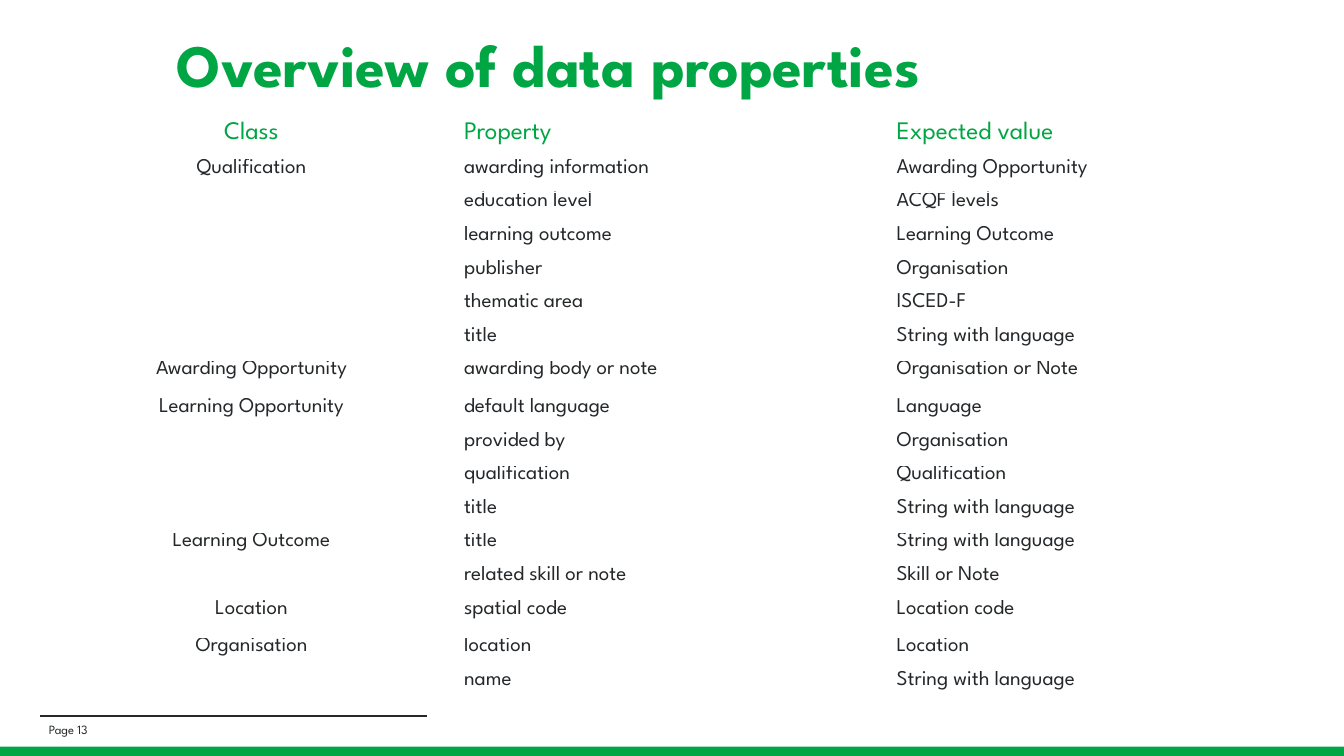
from dataclasses import dataclass

from lxml.etree import SubElement
from pptx import Presentation
from pptx.dml.color import RGBColor
from pptx.enum.shapes import MSO_CONNECTOR, MSO_SHAPE
from pptx.enum.text import MSO_ANCHOR, PP_ALIGN
from pptx.oxml.ns import qn
from pptx.slide import Slide
from pptx.table import Table
from pptx.text.text import TextFrame
from pptx.util import Emu, Pt

EMU_PER_PX = 9525
FONT = "League Spartan"
GREEN = "00A643"
DARK = "24282A"


@dataclass(frozen=True)
class ClassGroup:
    name: str
    properties: tuple[tuple[str, str], ...]
    last_row_height: int = 32


@dataclass(frozen=True)
class Label:
    text: str
    box: tuple[int, int, int, int]
    size: float
    color: str
    bold: bool = False
    line_spacing: float = 1.0


HEADERS = ("Class", "Property", "Expected value")
HEADER_HEIGHT = 38
ROW_HEIGHT = 32
COLUMN_WIDTHS = (384, 412, 415)
COLUMN_ALIGNMENTS = (PP_ALIGN.CENTER, PP_ALIGN.JUSTIFY, PP_ALIGN.JUSTIFY)

GROUPS = (
    ClassGroup("Qualification", (
        ("awarding information", "Awarding Opportunity"),
        ("education level", "ACQF levels"),
        ("learning outcome", "Learning Outcome"),
        ("publisher", "Organisation"),
        ("thematic area", "ISCED-F"),
        ("title", "String with language"),
    )),
    ClassGroup("Awarding Opportunity", (
        ("awarding body or note", "Organisation or Note"),
    ), last_row_height=36),
    ClassGroup("Learning Opportunity", (
        ("default language", "Language"),
        ("provided by", "Organisation"),
        ("qualification", "Qualification"),
        ("title", "String with language"),
    )),
    ClassGroup("Learning Outcome", (
        ("title", "String with language"),
        ("related skill or note", "Skill or Note"),
    )),
    ClassGroup("Location", (
        ("spatial code", "Location code"),
    ), last_row_height=36),
    ClassGroup("Organisation", (
        ("location", "Location"),
        ("name", "String with language"),
    )),
)

LABELS = (
    Label("Page 13", (37, 686, 390, 18), 9, DARK),
    Label("Overview of data properties", (159, 16, 1080, 97), 42.9, GREEN,
          bold=True, line_spacing=0.9),
)


def px(length: int) -> Emu:
    return Emu(length * EMU_PER_PX)


def rgb(color: str) -> RGBColor:
    return RGBColor.from_string(color)


def write_text(frame: TextFrame, text: str, *, size: float, color: str,
               bold: bool = False, alignment: PP_ALIGN = PP_ALIGN.LEFT,
               line_spacing: float = 1.0) -> None:
    paragraph = frame.paragraphs[0]
    paragraph.alignment = alignment
    paragraph.line_spacing = line_spacing
    run = paragraph.add_run()
    run.text = text
    run.font.name = FONT
    run.font.size = Pt(size)
    run.font.bold = bold
    run.font.color.rgb = rgb(color)


def add_label(slide: Slide, label: Label) -> None:
    frame = slide.shapes.add_textbox(*map(px, label.box)).text_frame
    frame.word_wrap = True
    frame.vertical_anchor = MSO_ANCHOR.MIDDLE
    write_text(frame, label.text, size=label.size, color=label.color,
               bold=label.bold, line_spacing=label.line_spacing)


def add_footer(slide: Slide) -> None:
    bar = slide.shapes.add_shape(MSO_SHAPE.RECTANGLE, px(-3), px(711), px(1286), px(13))
    bar.shadow.inherit = False
    bar.fill.solid()
    bar.fill.fore_color.rgb = rgb(GREEN)
    bar.line.fill.background()
    rule = slide.shapes.add_connector(MSO_CONNECTOR.STRAIGHT, px(38), px(682), px(407), px(682))
    rule.line.color.rgb = rgb(DARK)
    rule.line.width = Pt(1.5)
    SubElement(rule._element.spPr, qn("a:effectLst"))


def fill_row(table: Table, row: int, height: int, texts: tuple[str, ...], *,
             size: float, color: str, line_spacing: float = 1.0) -> None:
    table.rows[row].height = px(height)
    for column, text in enumerate(texts):
        cell = table.cell(row, column)
        cell.fill.background()
        cell.margin_left, cell.margin_right = px(11), px(10)
        cell.margin_top = cell.margin_bottom = 0
        write_text(cell.text_frame, text, size=size, color=color,
                   alignment=COLUMN_ALIGNMENTS[column], line_spacing=line_spacing)


def add_property_table(slide: Slide) -> None:
    row_count = 1 + sum(len(group.properties) for group in GROUPS)
    table = slide.shapes.add_table(
        row_count, len(HEADERS), px(47), px(113),
        px(sum(COLUMN_WIDTHS)), px(HEADER_HEIGHT + ROW_HEIGHT * (row_count - 1)),
    ).table
    table.first_row = False
    table.horz_banding = False
    for column, width in zip(table.columns, COLUMN_WIDTHS):
        column.width = px(width)
    fill_row(table, 0, HEADER_HEIGHT, HEADERS, size=18, color=GREEN, line_spacing=1.15)
    first = 1
    for group in GROUPS:
        last = first + len(group.properties) - 1
        for row, values in enumerate(group.properties, first):
            name = group.name if row == first else ""
            height = group.last_row_height if row == last else ROW_HEIGHT
            fill_row(table, row, height, (name, *values), size=15, color=DARK)
        if last > first:
            table.cell(first, 0).merge(table.cell(last, 0))
        first = last + 1


def main() -> None:
    presentation = Presentation()
    presentation.slide_width, presentation.slide_height = px(1280), px(720)
    slide = presentation.slides.add_slide(presentation.slide_layouts[6])
    add_footer(slide)
    add_property_table(slide)
    for label in LABELS:
        add_label(slide, label)
    presentation.save("out.pptx")


if __name__ == "__main__":
    main()
